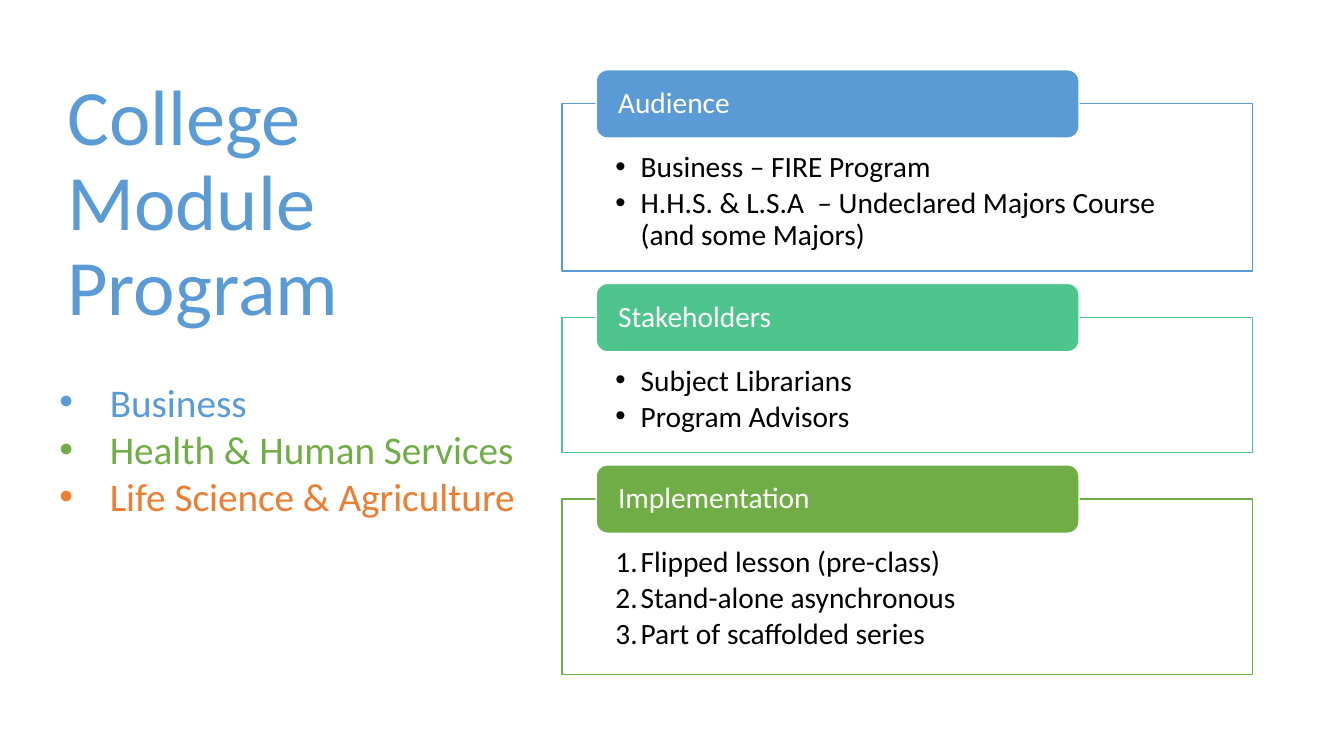
from dataclasses import dataclass

from lxml.etree import SubElement
from pptx import Presentation
from pptx.dml.color import RGBColor
from pptx.enum.shapes import MSO_SHAPE
from pptx.enum.text import MSO_ANCHOR, PP_ALIGN
from pptx.oxml.ns import qn
from pptx.util import Inches, Pt


@dataclass(frozen=True)
class Theme:
    font: str = "Calibri"
    blue: str = "5B9BD5"
    teal: str = "4DC58D"
    green: str = "70AD47"
    orange: str = "ED7D31"
    white: str = "FFFFFF"
    black: str = "000000"
    title: int = 56
    list: int = 28
    body: int = 21


THEME = Theme()
WIDE, HIGH = Inches(13.33), Inches(7.5)

PANELS = [
    ("Audience", THEME.blue, 22.13, "•",
     ["Business – FIRE Program",
      "H.H.S. & L.S.A  – Undeclared Majors Course (and some Majors)"]),
    ("Stakeholders", THEME.teal, 17.87, "•",
     ["Subject Librarians", "Program Advisors"]),
    ("Implementation", THEME.green, 23.2, "1.",
     ["Flipped lesson (pre-class)", "Stand-alone asynchronous",
      "Part of scaffolded series"]),
]
COLLEGES = [
    ("Business", THEME.blue),
    ("Health & Human Services", THEME.green),
    ("Life Science & Agriculture", THEME.orange),
]


def col(n):
    return round(WIDE * n / 100)


def row(n):
    return round(HIGH * n / 100)


def area(x, y, w, h):
    return col(x), row(y), col(w), row(h)


def tint(text):
    return RGBColor.from_string(text)


def pad(frame, x, top, base):
    frame.margin_left = frame.margin_right = col(x)
    frame.margin_top, frame.margin_bottom = row(top), row(base)


def write(para, text, size, color):
    run = para.add_run()
    run.text = text
    run.font.name = THEME.font
    run.font.size = Pt(size)
    run.font.color.rgb = tint(color)


def mark(para, sign, dent):
    props = para._p.get_or_add_pPr()
    props.set("marL", str(Inches(dent)))
    props.set("indent", str(-Inches(dent)))
    if sign == "1.":
        SubElement(props, qn("a:buAutoNum"), type="arabicPeriod")
    else:
        SubElement(props, qn("a:buFont"), typeface="Arial")
        SubElement(props, qn("a:buChar"), char=sign)


def fill_list(frame, items, size, sign, dent, line=1.0, after=0):
    for n, (text, color) in enumerate(items):
        para = frame.add_paragraph() if n else frame.paragraphs[0]
        para.alignment = PP_ALIGN.LEFT
        para.line_spacing = line
        para.space_after = Pt(after)
        mark(para, sign, dent)
        write(para, text, size, color)


def add_box(slide, kind, place, fill, edge):
    box = slide.shapes.add_shape(kind, *place)
    box.shadow.inherit = False
    box.fill.solid()
    box.fill.fore_color.rgb = tint(fill)
    box.line.color.rgb = tint(edge)
    box.line.width = Pt(1)
    box.text_frame.word_wrap = True
    return box


def add_panel(slide, top, name, color, high, sign, lines):
    box = add_box(slide, MSO_SHAPE.RECTANGLE, area(41.8, top, 51.4, high),
                  THEME.white, color)
    shade = box.fill._xPr.find(qn("a:solidFill"))[0]
    SubElement(shade, qn("a:alpha"), val="90000")
    frame = box.text_frame
    frame.vertical_anchor = MSO_ANCHOR.TOP
    pad(frame, 3.99, 6.4, 2.1)
    items = [(line, THEME.black) for line in lines]
    fill_list(frame, items, THEME.body, sign, 0.25, 0.9, 3)

    head = add_box(slide, MSO_SHAPE.ROUNDED_RECTANGLE,
                   area(44.36, top - 4.5, 35.93, 9.05), color, THEME.white)
    frame = head.text_frame
    frame.vertical_anchor = MSO_ANCHOR.MIDDLE
    pad(frame, 1.38, 0, 0)
    para = frame.paragraphs[0]
    para.alignment = PP_ALIGN.LEFT
    para.line_spacing = 0.9
    write(para, name, THEME.body, THEME.white)


def add_text(slide, place):
    frame = slide.shapes.add_textbox(*place).text_frame
    frame.word_wrap = True
    return frame


def add_title(slide):
    frame = add_text(slide, area(4.28, 9.07, 31.2, 36.13))
    frame.vertical_anchor = MSO_ANCHOR.MIDDLE
    para = frame.paragraphs[0]
    para.line_spacing = 0.9
    write(para, "College Module", THEME.title, THEME.blue)
    para.add_line_break()
    write(para, "Program", THEME.title, THEME.blue)


def main():
    deck = Presentation()
    deck.slide_width, deck.slide_height = WIDE, HIGH
    slide = deck.slides.add_slide(deck.slide_layouts[6])
    add_title(slide)
    top, gap = 13.73, 6.13
    for name, color, high, sign, lines in PANELS:
        add_panel(slide, top, name, color, high, sign, lines)
        top += high + gap
    frame = add_text(slide, area(3.68, 49.33, 36, 20.13))
    fill_list(frame, COLLEGES, THEME.list, "•", 0.5)
    deck.save("out.pptx")


if __name__ == "__main__":
    main()
